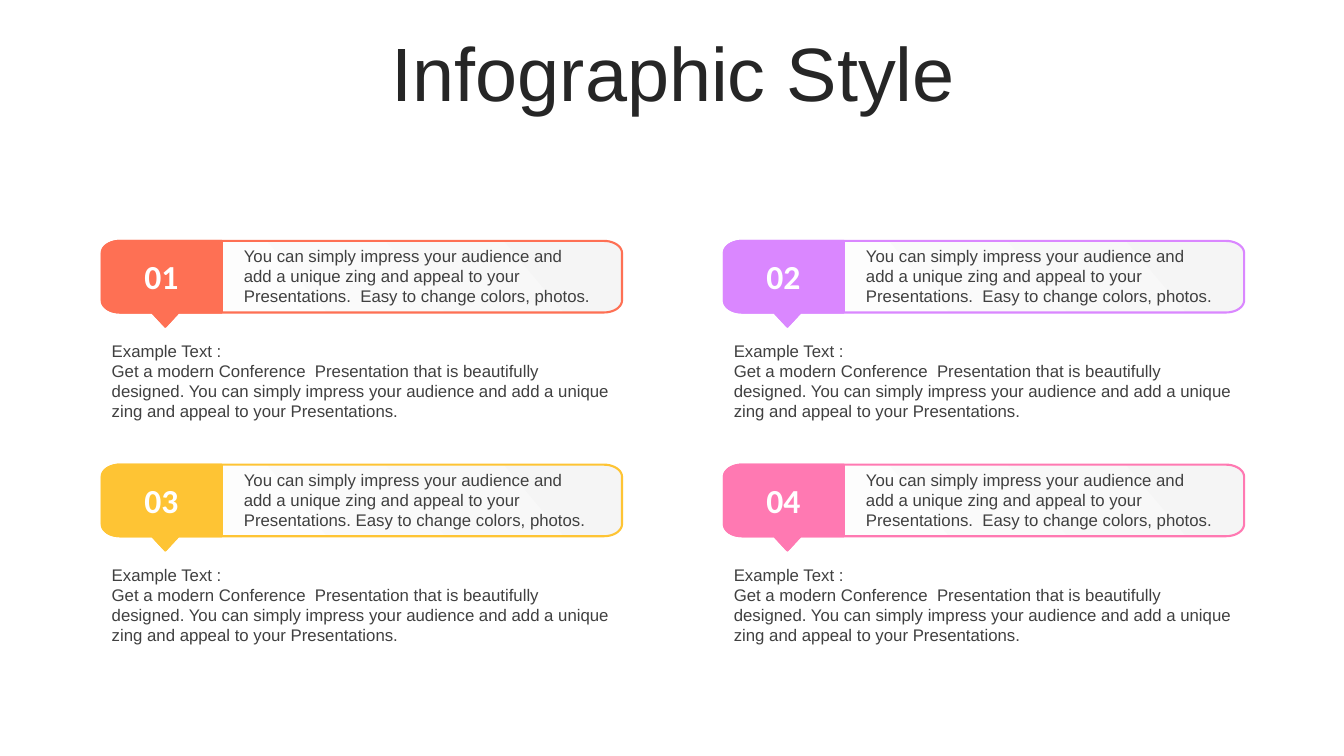
import math

import pptx
import pptx.dml.color
import pptx.enum.text
import pptx.util

PX = 9144
CORAL = pptx.dml.color.RGBColor(0xFE, 0x70, 0x54)
VIOLET = pptx.dml.color.RGBColor(0xDA, 0x87, 0xFF)
AMBER = pptx.dml.color.RGBColor(0xFE, 0xC4, 0x34)
PINK = pptx.dml.color.RGBColor(0xFF, 0x79, 0xB2)
WHITE = pptx.dml.color.RGBColor(0xFF, 0xFF, 0xFF)
PALE_GRAY = pptx.dml.color.RGBColor(0xF5, 0xF5, 0xF5)
TEXT_GRAY = pptx.dml.color.RGBColor(0x40, 0x40, 0x40)
TITLE_GRAY = pptx.dml.color.RGBColor(0x26, 0x26, 0x26)

CARD_LEFT, CARD_TOP = 101, 239
COLUMN_PITCH, ROW_PITCH = 617, 222
CARD_WIDTH, CARD_HEIGHT, TAB_WIDTH = 516, 71, 119
CORNER_X, CORNER_Y = 18, 12
POINTER_CENTER, POINTER_HALF, POINTER_DROP = 63, 13, 14

SUMMARY = (
    "You can simply impress your audience and add a unique zing and appeal "
    "to your Presentations.{gap}Easy to change colors, photos."
)
DETAIL = (
    "Example Text :\n"
    "Get a modern Conference  Presentation that is beautifully designed. "
    "You can simply impress your audience and add a unique zing and appeal "
    "to your Presentations."
)
CARDS = [
    ("01", CORAL, "  "),
    ("02", VIOLET, "  "),
    ("03", AMBER, " "),
    ("04", PINK, "  "),
]


def px(length):
    return pptx.util.Emu(length * PX)


def corner(center_x, center_y, start_angle):
    angles = [math.radians(start_angle + 9 * step) for step in range(11)]
    return [
        (center_x + CORNER_X * math.cos(angle), center_y + CORNER_Y * math.sin(angle))
        for angle in angles
    ]


def callout_points(left, top, width, round_right):
    right, bottom = left + width, top + CARD_HEIGHT
    tip = left + POINTER_CENTER
    if round_right:
        right_side = corner(right - CORNER_X, top + CORNER_Y, -90)
        right_side += corner(right - CORNER_X, bottom - CORNER_Y, 0)
    else:
        right_side = [(right, top), (right, bottom)]
    pointer = [
        (tip + POINTER_HALF, bottom),
        (tip, bottom + POINTER_DROP),
        (tip - POINTER_HALF, bottom),
    ]
    left_side = corner(left + CORNER_X, bottom - CORNER_Y, 90)
    left_side += corner(left + CORNER_X, top + CORNER_Y, 180)
    return right_side + pointer + left_side


def add_callout(slide, left, top, width, color, round_right):
    points = [
        (x * PX, y * PX) for x, y in callout_points(left, top, width, round_right)
    ]
    builder = slide.shapes.build_freeform(*points[0])
    builder.add_line_segments(points[1:], close=True)
    shape = builder.convert_to_shape()
    shape.shadow.inherit = False
    shape.line.color.rgb = color
    shape.line.width = pptx.util.Pt(1.5)
    return shape


def add_panel(slide, left, top, color):
    panel = add_callout(slide, left, top, CARD_WIDTH, color, True)
    panel.fill.gradient()
    panel.fill.gradient_angle = 220
    for stop, stop_color, position in zip(
        panel.fill.gradient_stops, (PALE_GRAY, WHITE), (0, 1)
    ):
        stop.color.rgb = stop_color
        stop.position = position


def add_tab(slide, left, top, color):
    tab = add_callout(slide, left, top, TAB_WIDTH, color, False)
    tab.fill.solid()
    tab.fill.fore_color.rgb = color


def add_text(slide, box, text, size, color, font="Arial", bold=False, centered=False):
    shape = slide.shapes.add_textbox(*[px(length) for length in box])
    text_frame = shape.text_frame
    text_frame.word_wrap = True
    text_frame.text = text
    for paragraph in text_frame.paragraphs:
        if centered:
            paragraph.alignment = pptx.enum.text.PP_ALIGN.CENTER
        for run in paragraph.runs:
            run.font.name = font
            run.font.size = pptx.util.Pt(size)
            run.font.bold = bold
            run.font.color.rgb = color
    return text_frame


def add_title(slide, text):
    text_frame = add_text(slide, (35, 37, 1266, 79), text, 54, TITLE_GRAY, centered=True)
    text_frame.vertical_anchor = pptx.enum.text.MSO_ANCHOR.MIDDLE
    paragraph = text_frame.paragraphs[0]
    paragraph.line_spacing = 0.9
    paragraph.space_before = pptx.util.Pt(10)


def add_card(slide, left, top, number, color, gap):
    add_panel(slide, left, top, color)
    add_tab(slide, left, top, color)
    add_text(slide, (left + 20, top + 10, 78, 50), number, 24, WHITE,
             font="Calibri", bold=True, centered=True)
    add_text(slide, (left + 131, top, 368, 71), SUMMARY.format(gap=gap), 12, TEXT_GRAY)
    add_text(slide, (left, top + 94, CARD_WIDTH, 91), DETAIL, 12, TEXT_GRAY)


def main():
    presentation = pptx.Presentation()
    presentation.slide_width = px(1333)
    presentation.slide_height = px(750)
    slide = presentation.slides.add_slide(presentation.slide_layouts[6])
    add_title(slide, "Infographic Style")
    for index, (number, color, gap) in enumerate(CARDS):
        row, column = divmod(index, 2)
        left = CARD_LEFT + column * COLUMN_PITCH
        top = CARD_TOP + row * ROW_PITCH
        add_card(slide, left, top, number, color, gap)
    presentation.save("out.pptx")


if __name__ == "__main__":
    main()
